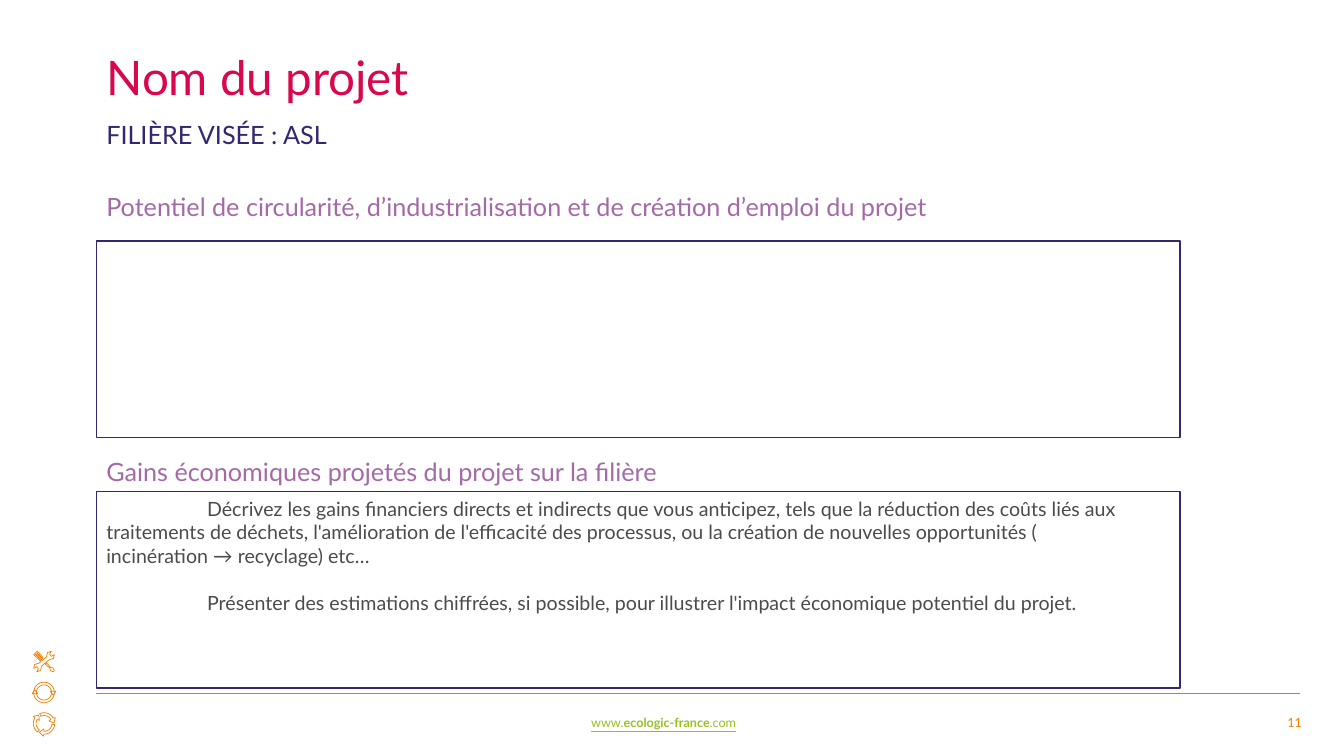
import math
from dataclasses import dataclass
from lxml import etree
from pptx import Presentation
from pptx.dml.color import RGBColor
from pptx.enum import shapes, text
from pptx.oxml import ns
from pptx.util import Cm, Pt


@dataclass(frozen=True)
class Theme:
    font: str = "Lato"
    title: str = "D9084D"
    navy: str = "362671"
    heading: str = "A46AA7"
    body: str = "4B4B4B"
    orange: str = "EE7F00"
    green: str = "95C11F"
    rule: str = "8C8C8C"
    white: str = "FFFFFF"
    title_size: int = 34
    heading_size: int = 18
    body_size: int = 14
    footer_size: int = 9


THEME = Theme()
LEFT, HEADING_WIDTH, HEADING_HEIGHT = 2.43, 29, 1.02
PANEL_WIDTH, PANEL_HEIGHT = 27.31, 4.95


def rgb(value):
    return RGBColor.from_string(value)


def add_run(paragraph, words, size, color, bold=False, underline=False):
    run = paragraph.add_run()
    run.text = words
    font = run.font
    font.name, font.size, font.bold = THEME.font, Pt(size), bold
    font.underline = underline
    font.color.rgb = rgb(color)


def prepare_frame(frame):
    frame.word_wrap = True
    frame.auto_size = text.MSO_AUTO_SIZE.NONE
    frame.vertical_anchor = text.MSO_ANCHOR.TOP
    paragraph = frame.paragraphs[0]
    paragraph.alignment = text.PP_ALIGN.LEFT
    return paragraph


def add_text_box(slide, left, top, width, height):
    box = slide.shapes.add_textbox(Cm(left), Cm(top), Cm(width), Cm(height))
    return prepare_frame(box.text_frame)


def add_heading(slide, top, words, color):
    heading = add_text_box(slide, LEFT, top, HEADING_WIDTH, HEADING_HEIGHT)
    add_run(heading, words, THEME.heading_size, color)


def outline(shape, color, width):
    shape.shadow.inherit = False
    shape.line.color.rgb = rgb(color)
    shape.line.width = Pt(width)


# Title and target sector
def add_header(slide, top):
    title = slide.shapes.title
    title.left, title.top = Cm(LEFT), Cm(top)
    title.width, title.height = Cm(HEADING_WIDTH), Cm(1.57)
    paragraph = prepare_frame(title.text_frame)
    paragraph.line_spacing = 0.9
    add_run(paragraph, "Nom du projet", THEME.title_size, THEME.title)
    add_heading(slide, top + 1.65, "FILIÈRE VISÉE : ASL", THEME.navy)


# Framed answer area; each paragraph is a list of lines
def add_panel(slide, top, paragraphs=()):
    panel = slide.shapes.add_shape(shapes.MSO_SHAPE.RECTANGLE, Cm(LEFT), Cm(top),
                                   Cm(PANEL_WIDTH), Cm(PANEL_HEIGHT))
    panel.fill.solid()
    panel.fill.fore_color.rgb = rgb(THEME.white)
    outline(panel, THEME.navy, 1)
    paragraph = prepare_frame(panel.text_frame)
    for index, lines in enumerate(paragraphs):
        if index:
            paragraph = panel.text_frame.add_paragraph()
            paragraph.alignment = text.PP_ALIGN.LEFT
            paragraph.space_before = Pt(16.8)
        paragraph._p.get_or_add_pPr().set("indent", str(Cm(2.54)))
        for number, line in enumerate(lines):
            if number:
                paragraph.add_line_break()
            add_run(paragraph, line, THEME.body_size, THEME.body)


# Footer rule, web address and page number
def add_footer(slide, top):
    rule = slide.shapes.add_connector(shapes.MSO_CONNECTOR.STRAIGHT,
                                      Cm(LEFT), Cm(top), Cm(32.75), Cm(top))
    rule.line.color.rgb = rgb(THEME.rule)
    rule.line.width = Pt(0.75)
    etree.SubElement(rule._element.spPr, ns.qn("a:effectLst"))

    address = add_text_box(slide, 14.65, top + 0.42, 13.31, 0.64)
    for words, bold in (("www.", False), ("ecologic-france", True), (".com", False)):
        add_run(address, words, THEME.footer_size, THEME.green, bold, underline=True)

    page = add_text_box(slide, 31.43, top + 0.4, 1.63, 0.66)
    page.alignment = text.PP_ALIGN.RIGHT
    add_run(page, "11", THEME.footer_size, THEME.orange)


# One outline made of one or more closed contours
def add_outline(slide, *contours):
    builder = None
    for contour in contours:
        start, *others = [(Cm(x), Cm(y)) for x, y in contour]
        if builder is None:
            builder = slide.shapes.build_freeform(*start)
        else:
            builder.move_to(*start)
        builder.add_line_segments(others, close=True)
    icon = builder.convert_to_shape()
    icon.fill.background()
    outline(icon, THEME.orange, 0.5)


def polar(x, y, radius, degrees):
    angle = math.radians(degrees)
    return x + radius * math.cos(angle), y + radius * math.sin(angle)


def add_tools_icon(slide, x, y):
    size = 0.54
    wrench_head = [(.62, .28), (.66, .08), (.84, .02), (.76, .16),
                   (.84, .26), (.98, .18), (.94, .36), (.74, .42)]
    wrench = wrench_head + [(1 - px, 1 - py) for px, py in wrench_head]
    handle = [(.02, .18), (.18, .02), (.46, .32), (.32, .46)]
    blade = [(.56, .62), (.62, .56), (.82, .78), (.92, .8),
             (.98, .92), (.92, .98), (.8, .92), (.78, .82)]
    grooves = [[(gx, gy), (gx + .02, gy - .02), (gx + .24, gy + .2), (gx + .22, gy + .22)]
               for gx, gy in ((.16, .12), (.1, .18))]
    for part in ([wrench, handle, blade], *([groove] for groove in grooves)):
        add_outline(slide, *([(x + (px - 0.5) * size, y + (py - 0.5) * size)
                              for px, py in contour] for contour in part))


def add_ring_icon(slide, x, y):
    rings = [[polar(x, y, radius, angle) for angle in range(0, 360, 10)]
             for radius in (0.26, 0.19)]
    arrowheads = [[(x + side * dx, y + side * dy)
                   for dx, dy in ((0.16, -0.03), (0.3, -0.03), (0.23, 0.07))]
                  for side in (1, -1)]
    add_outline(slide, *rings, *arrowheads)


def add_cycle_icon(slide, x, y):
    outer = [(0.27, angle) for angle in range(-114, -26, 12)]
    head = [(0.32, -27), (0.25, -2), (0.14, -27)]
    inner = [(0.2, angle) for _, angle in reversed(outer)]
    for turn in (0, 120, 240):
        add_outline(slide, [polar(x, y, radius, angle + turn)
                            for radius, angle in outer + head + inner])


# Column of icons in the lower left corner
def add_icons(slide, x, top, pitch):
    for index, draw in enumerate((add_tools_icon, add_ring_icon, add_cycle_icon)):
        draw(slide, x, top + index * pitch)


def main():
    deck = Presentation()
    deck.slide_width, deck.slide_height = Cm(33.87), Cm(19.05)
    slide = deck.slides.add_slide(deck.slide_layouts[5])
    add_footer(slide, 17.48)
    add_icons(slide, 1.11, 16.67, 0.78)
    add_header(slide, 1.24)
    add_heading(slide, 4.7, "Potentiel de circularité, d’industrialisation et de création "
                "d’emploi du projet", THEME.heading)
    add_panel(slide, 6.07)
    add_heading(slide, 11.38, "Gains économiques projetés du projet sur la filière", THEME.heading)
    add_panel(slide, 12.39, [
        ["Décrivez les gains financiers directs et indirects que vous anticipez, tels que la "
         "réduction des coûts liés aux traitements de déchets, l'amélioration de l'efficacité "
         "des processus, ou la création de nouvelles opportunités (",
         "incinération → recyclage) etc…"],
        ["Présenter des estimations chiffrées, si possible, pour illustrer l'impact "
         "économique potentiel du projet."],
    ])
    deck.save("out.pptx")


if __name__ == "__main__":
    main()
